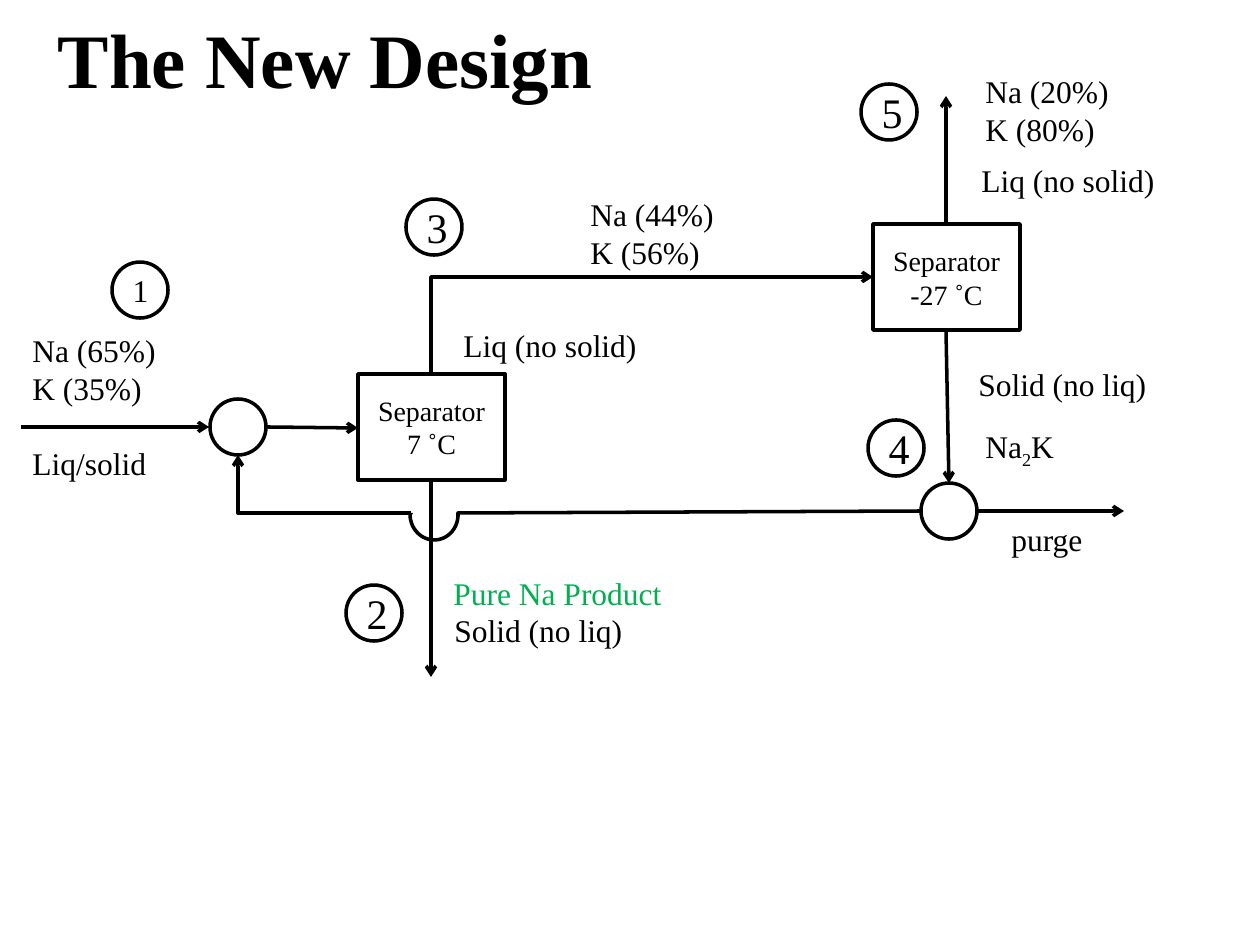
import pptx
import pptx.dml.color
import pptx.enum.shapes
import pptx.enum.text
import pptx.oxml
import pptx.oxml.ns
import pptx.util

SHAPE = pptx.enum.shapes.MSO_SHAPE
CONNECTOR = pptx.enum.shapes.MSO_CONNECTOR
ALIGN = pptx.enum.text.PP_ALIGN
ANCHOR = pptx.enum.text.MSO_ANCHOR
AUTO = pptx.enum.text.MSO_AUTO_SIZE
FONT = "Times New Roman"
BLACK, GREEN = "000000", "00B050"
PX_PER_INCH = 126
NODE = 56


def px(n):
    return pptx.util.Emu(round(n * 914400 / PX_PER_INCH))


def color(value):
    return pptx.dml.color.RGBColor.from_string(value)


def apply(obj, values):
    for name, value in values.items():
        setattr(obj, name, value)


def write(tf, lines, size, ink=BLACK, align=ALIGN.LEFT, bold=False):
    """Write one paragraph per line; a piece between underscores is subscript."""
    for i, line in enumerate(lines):
        p = tf.add_paragraph() if i else tf.paragraphs[0]
        p.alignment = align
        for j, piece in enumerate(line.split("_")):
            r = p.add_run()
            r.text = piece
            apply(r.font, {"name": FONT, "size": pptx.util.Pt(size), "bold": bold})
            r.font.color.rgb = color(ink)
            if j % 2:
                r.font._element.set("baseline", "-25000")


def outline(line):
    line.color.rgb = color(BLACK)
    line.width = pptx.util.Pt(2)


def title(s, text):
    sp = s.shapes.title
    apply(sp, {"left": px(-242), "top": px(8), "width": px(1135), "height": px(99)})
    tf = sp.text_frame
    apply(tf, {"margin_left": 0, "margin_top": 0, "margin_right": px(5),
               "margin_bottom": 0, "vertical_anchor": ANCHOR.MIDDLE,
               "word_wrap": True, "auto_size": AUTO.NONE})
    write(tf, [text], 44, align=ALIGN.CENTER, bold=True)
    pPr = tf.paragraphs[0]._p.get_or_add_pPr()
    pPr.set("marL", str(px(5)))
    pPr.set("indent", "0")


def label(s, x, y, w, *lines, ink=BLACK):
    sp = s.shapes.add_textbox(px(x), px(y), px(w), px(12 + 39 * len(lines)))
    tf = sp.text_frame
    apply(tf, {"word_wrap": True, "auto_size": AUTO.SHAPE_TO_FIT_TEXT})
    write(tf, lines, 18, ink)
    return tf


def block(s, kind, x, y, w, h, lines=(), size=16):
    sp = s.shapes.add_shape(kind, px(x), px(y), px(w), px(h))
    sp.shadow.inherit = False
    sp.fill.background()
    outline(sp.line)
    apply(sp.text_frame, {"word_wrap": True, "vertical_anchor": ANCHOR.MIDDLE})
    write(sp.text_frame, lines, size, align=ALIGN.CENTER)
    return sp


def node(s, x, y, number=None, size=24):
    block(s, SHAPE.OVAL, x, y, NODE, NODE, [number] if number else (), size)


def stream(s, x1, y1, x2, y2, arrow=True, kind=CONNECTOR.STRAIGHT):
    c = s.shapes.add_connector(kind, px(x1), px(y1), px(x2), px(y2))
    outline(c.line)
    if arrow:
        ln = c.line._get_or_add_ln()
        ln.append(pptx.oxml.parse_xml(
            f'<a:tailEnd {pptx.oxml.ns.nsdecls("a")} type="arrow"/>'))
    c._element.spPr.append(pptx.oxml.parse_xml(
        f'<a:effectLst {pptx.oxml.ns.nsdecls("a")}/>'))
    return c


def elbow(s, x1, y1, x2, y2, preset, rotation, flips, adjust=None):
    """Bent stream: its box is stored unrotated, so width and height swap."""
    w, h = abs(y2 - y1), abs(x2 - x1)
    left, top = (x1 + x2 - w) / 2, (y1 + y2 - h) / 2
    c = stream(s, left, top, left + w, top + h, kind=CONNECTOR.ELBOW)
    spPr = c._element.spPr
    spPr.xfrm.set("rot", str(rotation * 60000))
    for flip in flips:
        spPr.xfrm.set(flip, "1")
    geom = spPr.find(pptx.oxml.ns.qn("a:prstGeom"))
    geom.set("prst", preset)
    if adjust is not None:
        geom.find(pptx.oxml.ns.qn("a:avLst")).append(pptx.oxml.parse_xml(
            f'<a:gd {pptx.oxml.ns.nsdecls("a")} name="adj1" fmla="val {adjust}"/>'))


def line_hop(s):
    """Half loop where the recycle passes the product stream."""
    sp = block(s, SHAPE.BLOCK_ARC, 410, 489, 48, 51)
    sp.fill.solid()
    sp.fill.fore_color.rgb = color(BLACK)
    sp.rotation = 176.3
    for i, value in enumerate((108, 3.45, 0)):
        sp.adjustments[i] = value


def main():
    prs = pptx.Presentation()
    apply(prs, {"slide_width": px(1260), "slide_height": px(945)})
    s = prs.slides.add_slide(prs.slide_layouts[5])
    title(s, "The New Design")

    block(s, SHAPE.RECTANGLE, 358, 374, 147, 106, ["Separator", "7 ˚C"])
    block(s, SHAPE.RECTANGLE, 873, 224, 147, 106, ["Separator -27 ˚C"])

    for ends in ((21, 427, 209, 427), (266, 427, 358, 428), (946, 224, 946, 96),
                 (946, 330, 949, 483), (431, 480, 431, 677), (977, 511, 1124, 511)):
        stream(s, *ends)
    stream(s, 458, 513, 921, 511, arrow=False)
    elbow(s, 431, 374, 873, 277, "bentConnector2", 90, ("flipH", "flipV"))
    elbow(s, 411, 513, 238, 455, "bentConnector3", 270, ("flipV",), -400)
    line_hop(s)

    node(s, 112, 262, "1", 18)
    for x, y, number in ((346, 585, "2"), (406, 199, "3"),
                         (868, 420, "4"), (861, 84, "5")):
        node(s, x, y, number)
    for x, y in ((210, 399), (921, 483)):
        node(s, x, y)

    feed = label(s, 20, 325, 159, "Na (65%)", "K (35%)", "Liq/solid")
    feed.paragraphs[2].space_before = pptx.util.Pt(21)
    label(s, 578, 189, 226, "Na (44%)", "K (56%)")
    label(s, 973, 66, 226, "Na (20%)", "K (80%)")
    label(s, 451, 320, 218, "Liq (no solid)")
    label(s, 969, 155, 218, "Liq (no solid)")
    label(s, 442, 605, 218, "Solid (no liq)")
    label(s, 966, 359, 218, "Solid (no liq)")
    label(s, 973, 421, 226, "Na_2_K")
    label(s, 999, 514, 226, "purge")
    label(s, 441, 568, 268, "Pure Na Product", ink=GREEN)
    prs.save("out.pptx")


if __name__ == "__main__":
    main()
